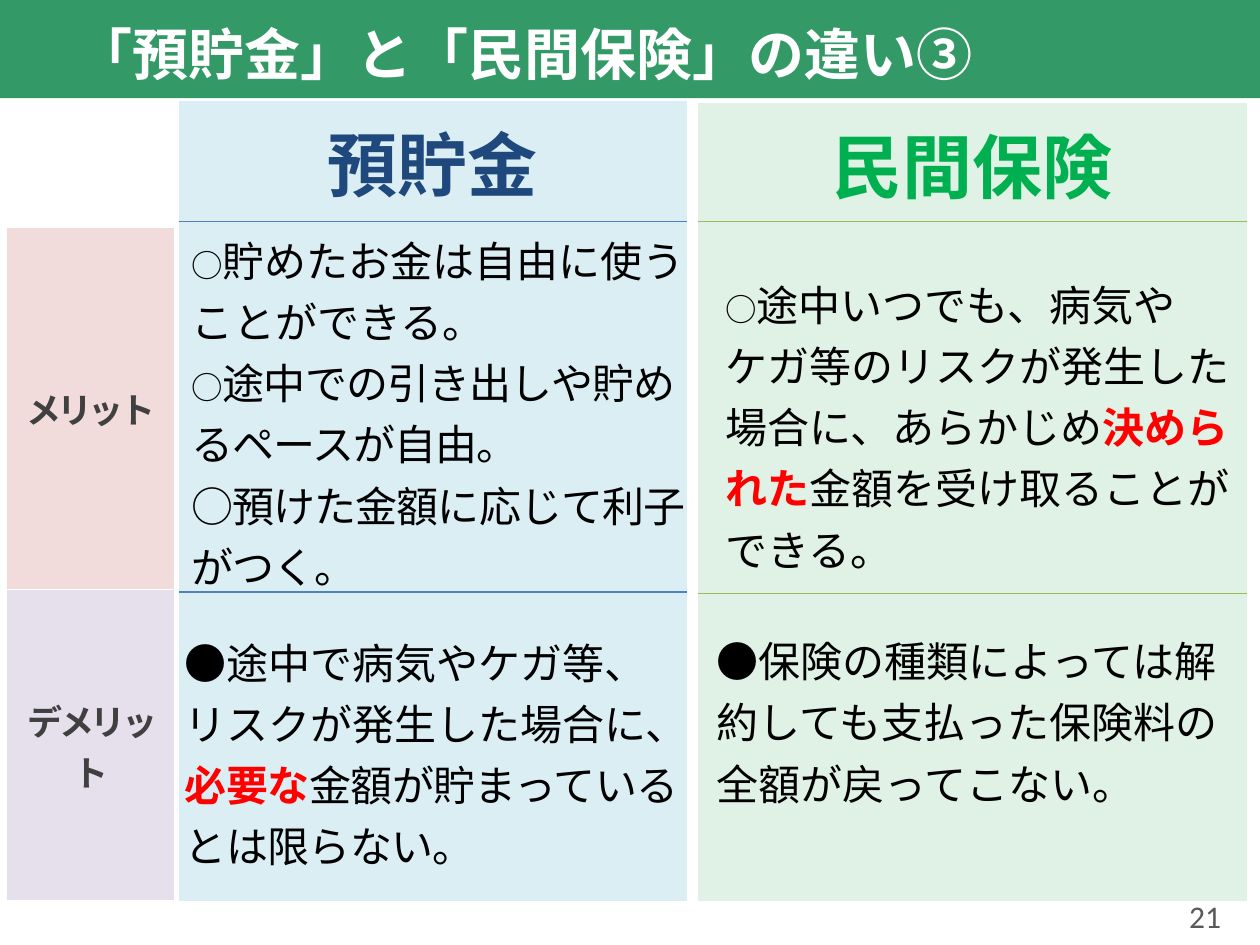
import dataclasses

import pptx
import pptx.dml.color
import pptx.enum.shapes
import pptx.enum.text
import pptx.oxml.ns
import pptx.util
from lxml import etree

PX = 9144  # EMU per px, 100 px to the inch
PLAIN_TABLE = "{2D5ABB26-0587-4C30-8999-92F81FD0307C}"
ALIGN = pptx.enum.text.PP_ALIGN
ANCHOR = pptx.enum.text.MSO_ANCHOR
qn = pptx.oxml.ns.qn


@dataclasses.dataclass(frozen=True)
class Theme:
    font: str = "Noto Sans CJK JP"
    number_font: str = "Calibri"
    title: int = 32
    heading: int = 40
    label: int = 20
    body: int = 24
    small: int = 18
    leading: int = 35
    banner: str = "339966"
    white: str = "FFFFFF"
    ink: str = "000000"
    accent: str = "FF0000"
    grey: str = "595959"
    label_ink: str = "404040"
    merit: str = "F2DCDB"
    demerit: str = "E6E0EC"
    savings: tuple = ("DBEEF4", "4F81BD", "1F497D")  # fill, rule, heading
    insurance: tuple = ("E0F1E6", "9BBB59", "00B050")


T = Theme()


def px(*lengths):
    return [pptx.util.Emu(n * PX) for n in lengths]


def rgb(value):
    return pptx.dml.color.RGBColor.from_string(value)


def style_paragraph(p, size, color, bold=False, align=ALIGN.LEFT, font=T.font):
    p.alignment = align
    f = p.font
    f.name, f.size, f.bold = font, pptx.util.Pt(size), bold
    f.color.rgb = rgb(color)
    etree.SubElement(f._element, qn("a:ea"), typeface=font)


def add_run(p, text, size=None, color=None, spacing=0):
    """Add text; a colour marks emphasis, and spacing is in hundredths of a point."""
    r = p.add_run()
    r.text = text
    if size:
        r.font.size = pptx.util.Pt(size)
    if color:
        r.font.bold = True
        r.font.color.rgb = rgb(color)
    if spacing:
        r.font._element.set("spc", str(spacing))


def add_text_box(s, box, anchor=ANCHOR.TOP):
    tf = s.shapes.add_textbox(*px(*box)).text_frame
    tf.word_wrap = True
    tf.vertical_anchor = anchor
    return tf


def add_line(s, box, text, **style):
    p = add_text_box(s, box, ANCHOR.MIDDLE).paragraphs[0]
    add_run(p, text)
    style_paragraph(p, **style)


def add_body(s, box, paragraphs):
    tf = add_text_box(s, box)
    tf.auto_size = pptx.enum.text.MSO_AUTO_SIZE.SHAPE_TO_FIT_TEXT
    for i, runs in enumerate(paragraphs):
        p = tf.add_paragraph() if i else tf.paragraphs[0]
        style_paragraph(p, T.body, T.ink)
        p.line_spacing = pptx.util.Pt(T.leading)
        for run in runs:
            add_run(p, **run)


def set_borders(cell, sides, color):
    tc_pr = cell._tc.get_or_add_tcPr()
    for side in sides:
        ln = etree.SubElement(tc_pr, qn(f"a:ln{side}"), w="12700")
        fill = etree.SubElement(ln, qn("a:solidFill"))
        etree.SubElement(fill, qn("a:srgbClr"), val=color)


def add_column(s, left, top, width, heights, fills, sides, rule):
    """Add a one-column table with a fill and a set of border sides per row."""
    frame = s.shapes.add_table(len(heights), 1, *px(left, top, width, sum(heights)))
    table = frame.table
    table.first_row = table.horz_banding = False
    table._tbl.tblPr.find(qn("a:tableStyleId")).text = PLAIN_TABLE
    for i, height in enumerate(heights):
        table.rows[i].height = px(height)[0]
        cell = table.cell(i, 0)
        set_borders(cell, sides[i], rule)
        cell.fill.solid()
        cell.fill.fore_color.rgb = rgb(fills[i])
        cell.vertical_anchor = ANCHOR.MIDDLE
    return table


def fill_cell(cell, text, size, color, spacing=0):
    p = cell.text_frame.paragraphs[0]
    add_run(p, text, spacing=spacing)
    style_paragraph(p, size, color, True, ALIGN.CENTER)


def add_product(s, left, top, width, heights, name, colors):
    fill, rule, ink = colors
    table = add_column(s, left, top, width, heights, [fill] * 3, ("B", "TB", "T"), rule)
    fill_cell(table.cell(0, 0), name, T.heading, ink)


def add_row_labels(s, left, top, width, heights):
    table = add_column(s, left, top, width, heights, (T.merit, T.demerit),
                       ("LRTB", "LRTB"), T.white)
    for i, name in enumerate(("メリット", "デメリット")):
        fill_cell(table.cell(i, 0), name, T.label, T.label_ink, -210)


def add_banner(s, left, top, width, height):
    rect = pptx.enum.shapes.MSO_SHAPE.RECTANGLE
    sp = s.shapes.add_shape(rect, *px(left, top, width, height))
    sp.shadow.inherit = False
    sp.fill.solid()
    sp.fill.fore_color.rgb = rgb(T.banner)
    sp.line.fill.background()
    add_line(s, (left + 51, top + 3, 765, 79), "「預貯金」と「民間保険」の違い③",
             size=T.title, color=T.white, bold=True)


def add_savings_text(s, left, top, width):
    circle = dict(text="○", size=T.small)
    add_body(s, (left + 5, top, width, 300), [
        [circle, dict(text="貯めたお金は自由に使うことができる。")],
        [circle, dict(text="途中での引き出しや貯めるペースが自由。", spacing=-50)],
        [dict(text="○預けた金額に応じて利子がつく。", spacing=-50)],
    ])
    add_body(s, (left, top + 319, width, 202), [[
        dict(text="●途中で病気やケガ等、リスクが発生した場合に、"),
        dict(text="必要な", color=T.accent, spacing=-40),
        dict(text="金額が貯まっているとは限らない。", spacing=-40),
    ]])


def add_insurance_text(s, left, top, width):
    add_body(s, (left + 7, top, width, 201), [[
        dict(text="○", size=T.small),
        dict(text="途中いつでも、病気や　ケガ等のリスクが発生した場合に、あらかじめ"),
        dict(text="決められた", color=T.accent),
        dict(text="金額を受け取ることができる。"),
    ]])
    add_body(s, (left, top + 283, width, 152), [[
        dict(text="●保険の種類によっては解約しても支払った保険料の全額が戻ってこない。"),
    ]])


def main():
    prs = pptx.Presentation()
    prs.slide_width, prs.slide_height = px(1000, 750)
    s = prs.slides.add_slide(prs.slide_layouts[6])
    add_product(s, 554, 82, 436, (94, 295, 244), "民間保険", T.insurance)
    add_banner(s, 0, 0, 1000, 78)
    add_line(s, (746, 707, 233, 40), "21", size=T.small, color=T.grey,
             align=ALIGN.RIGHT, font=T.number_font)
    add_product(s, 142, 80, 403, (96, 294, 245), "預貯金", T.savings)
    add_row_labels(s, 5, 180, 134, (288, 247))
    add_savings_text(s, 137, 173, 417)
    add_insurance_text(s, 559, 208, 437)
    prs.save("out.pptx")


if __name__ == "__main__":
    main()
